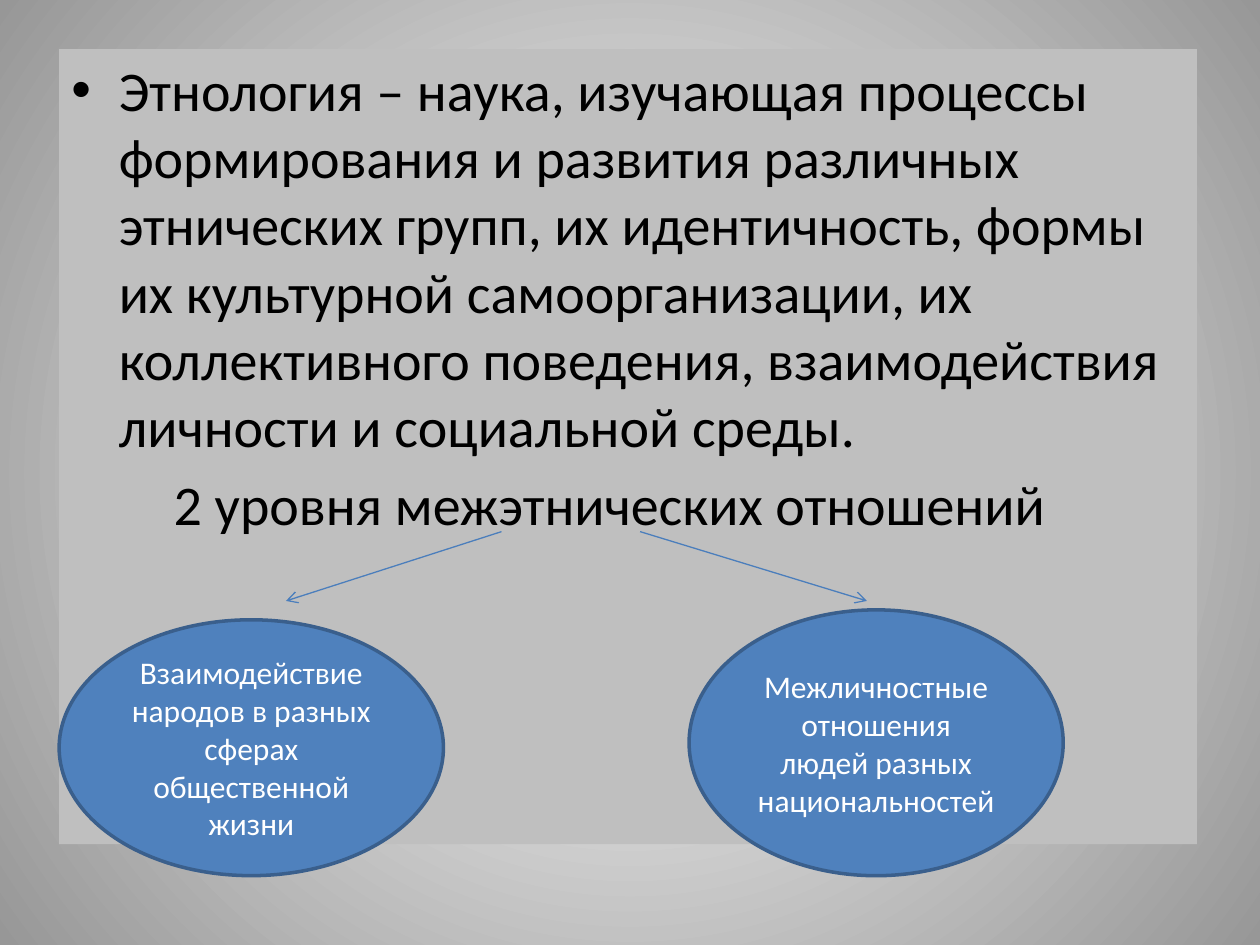
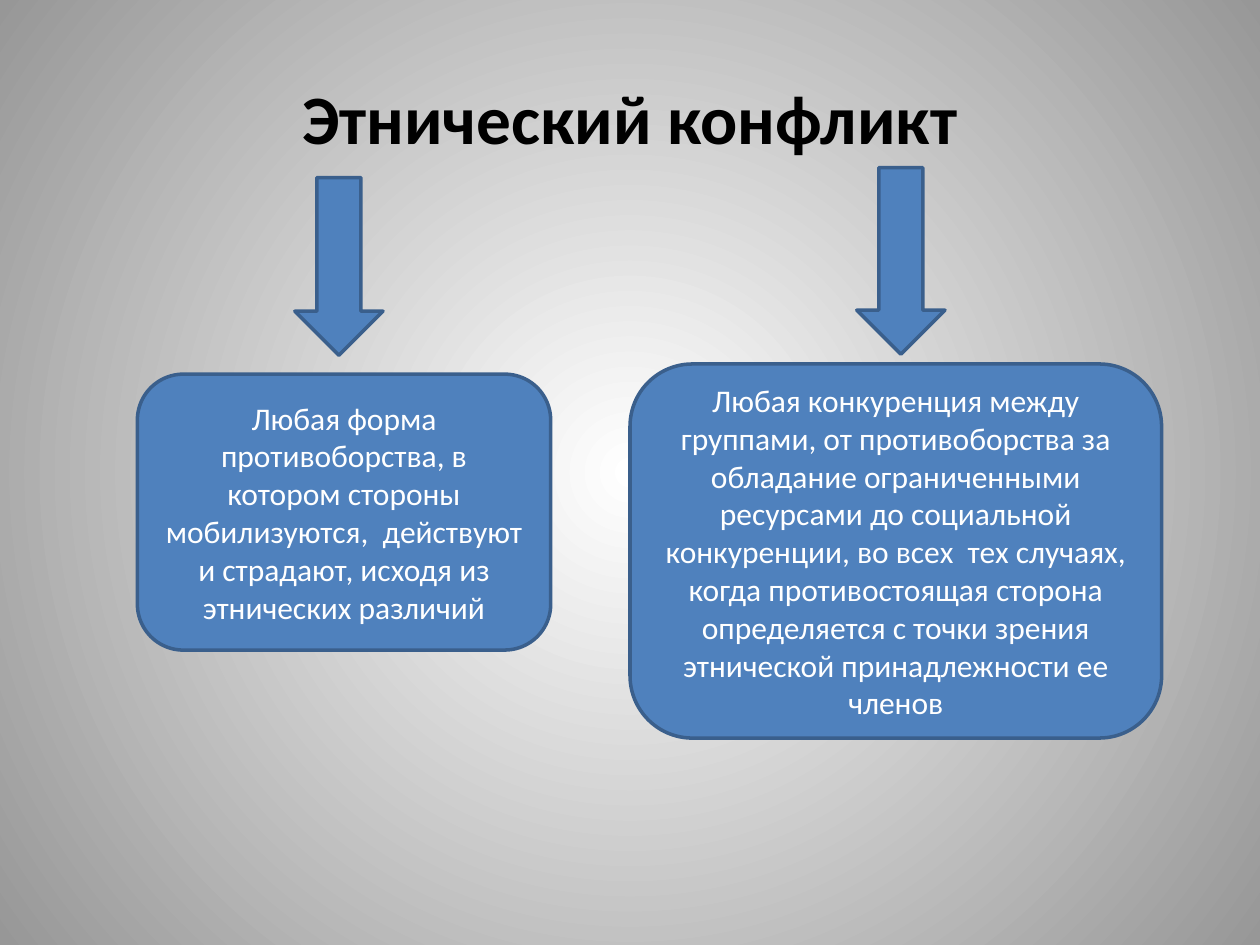
from lxml.etree import SubElement
from pptx import Presentation
from pptx.dml.color import RGBColor
from pptx.enum.shapes import MSO_CONNECTOR, MSO_SHAPE
from pptx.enum.text import MSO_ANCHOR, PP_ALIGN
from pptx.oxml.ns import qn
from pptx.util import Pt

WHITE = RGBColor(0xFF, 0xFF, 0xFF)
BLACK = RGBColor(0x00, 0x00, 0x00)
EDGE_GRAY = RGBColor(0x97, 0x97, 0x97)
PANEL_GRAY = RGBColor(0xBF, 0xBF, 0xBF)
BLUE = RGBColor(0x4F, 0x81, 0xBD)
OUTLINE = RGBColor(0x3A, 0x5F, 0x8C)
LINE_BLUE = RGBColor(0x4B, 0x7E, 0xBC)
FONT = "Calibri"


def write(p, text, size=18, color=WHITE, bold=False, align=PP_ALIGN.CENTER,
          margin=0, indent=0, before=0, bullet=None):
    """Fill one paragraph with formatted text."""
    pPr = p._p.get_or_add_pPr()
    pPr.set("marL", str(Pt(margin)))
    pPr.set("indent", str(Pt(indent)))
    p.alignment = align
    if before:
        p.space_before = Pt(before)
    if bullet:
        SubElement(pPr, qn("a:buFont")).set("typeface", "Arial")
        SubElement(pPr, qn("a:buChar")).set("char", bullet)
    r = p.add_run()
    r.text = text
    r.font.name = FONT
    r.font.size = Pt(size)
    r.font.bold = bold
    r.font.color.rgb = color


class Deck:
    """Shared style and the slide being built."""

    def __init__(self):
        self.prs = Presentation()
        self.prs.slide_width, self.prs.slide_height = Pt(720), Pt(540)

    def new_slide(self):
        self.slide = self.prs.slides.add_slide(self.prs.slide_layouts[6])
        fill = self.slide.background.fill
        fill.gradient()
        for stop, color in zip(fill.gradient_stops, (WHITE, EDGE_GRAY)):
            stop.color.rgb = color
        # Turn the linear gradient into a circle around the centre
        grad = self.slide._element.cSld.find(".//" + qn("a:gradFill"))
        grad.remove(grad.find(qn("a:lin")))
        path = SubElement(grad, qn("a:path"), {"path": "circle"})
        SubElement(path, qn("a:fillToRect"), dict.fromkeys("ltrb", "50000"))

    def shape(self, kind, box, *texts, fill=BLUE, outline=OUTLINE):
        sp = self.slide.shapes.add_shape(kind, *map(Pt, box))
        sp.shadow.inherit = False
        sp.fill.solid()
        sp.fill.fore_color.rgb = fill
        if outline is None:
            sp.line.fill.background()
        else:
            sp.line.color.rgb = outline
            sp.line.width = Pt(2)
        tf = sp.text_frame
        tf.word_wrap = True
        tf.vertical_anchor = MSO_ANCHOR.MIDDLE
        for i, text in enumerate(texts):
            write(tf.add_paragraph() if i else tf.paragraphs[0], text)
        return sp

    def title(self, text):
        tf = self.slide.shapes.add_textbox(*map(Pt, (36, 21.6, 648, 90))).text_frame
        tf.word_wrap = True
        tf.vertical_anchor = MSO_ANCHOR.MIDDLE
        write(tf.paragraphs[0], text, size=39.6, color=BLACK, bold=True)

    def panel(self, box, definition, subheading):
        sp = self.shape(MSO_SHAPE.RECTANGLE, box, fill=PANEL_GRAY, outline=None)
        tf = sp.text_frame
        tf.vertical_anchor = MSO_ANCHOR.TOP
        body = dict(size=32, color=BLACK, align=PP_ALIGN.LEFT)
        write(tf.paragraphs[0], definition, margin=27, indent=-27, bullet="•", **body)
        write(tf.add_paragraph(), subheading, margin=58.4, before=6.4, **body)

    def arrow(self, *ends):
        line = self.slide.shapes.add_connector(MSO_CONNECTOR.STRAIGHT, *map(Pt, ends))
        line.line.color.rgb = LINE_BLUE
        line.line.width = Pt(0.75)
        SubElement(line.line._get_or_add_ln(), qn("a:tailEnd")).set("type", "arrow")
        SubElement(line._element.spPr, qn("a:effectLst"))


def main():
    deck = Deck()

    # Slide 1: definition and two levels of relations
    deck.new_slide()
    deck.panel((33.8, 28.1, 650.2, 454.3),
               "Этнология – наука, изучающая процессы формирования и развития "
               "различных этнических групп, их идентичность, формы их культурной "
               "самоорганизации, их коллективного поведения, взаимодействия "
               "личности и социальной среды.",
               "2 уровня межэтнических отношений")
    for start_x, end_x in ((286.6, 163.4), (365.8, 495.4)):
        deck.arrow(start_x, 303.8, end_x, 343.4)
    deck.shape(MSO_SHAPE.OVAL, (33.8, 354.2, 219.6, 146.2),
               "Взаимодействие народов в разных сферах общественной жизни")
    deck.shape(MSO_SHAPE.OVAL, (393.8, 348.5, 213.8, 151.9),
               "Межличностные отношения людей разных национальностей")

    # Slide 2: two readings of ethnic conflict
    deck.new_slide()
    deck.title("Этнический конфликт")
    for box in ((168.5, 101.5, 50.4, 101.5), (489.6, 95.8, 50.4, 106.6)):
        deck.shape(MSO_SHAPE.DOWN_ARROW, box)
    deck.shape(MSO_SHAPE.ROUNDED_RECTANGLE, (78.5, 213.8, 236.2, 157.7),
               "Любая форма противоборства, в котором стороны",
               "мобилизуются,  действуют и страдают, исходя из этнических различий")
    deck.shape(MSO_SHAPE.ROUNDED_RECTANGLE, (360, 208, 303.8, 213.8),
               "Любая конкуренция между группами, от противоборства за обладание "
               "ограниченными ресурсами до социальной конкуренции, во всех  тех "
               "случаях, когда противостоящая сторона определяется с точки зрения "
               "этнической принадлежности ее членов")

    deck.prs.save("out.pptx")


if __name__ == "__main__":
    main()
